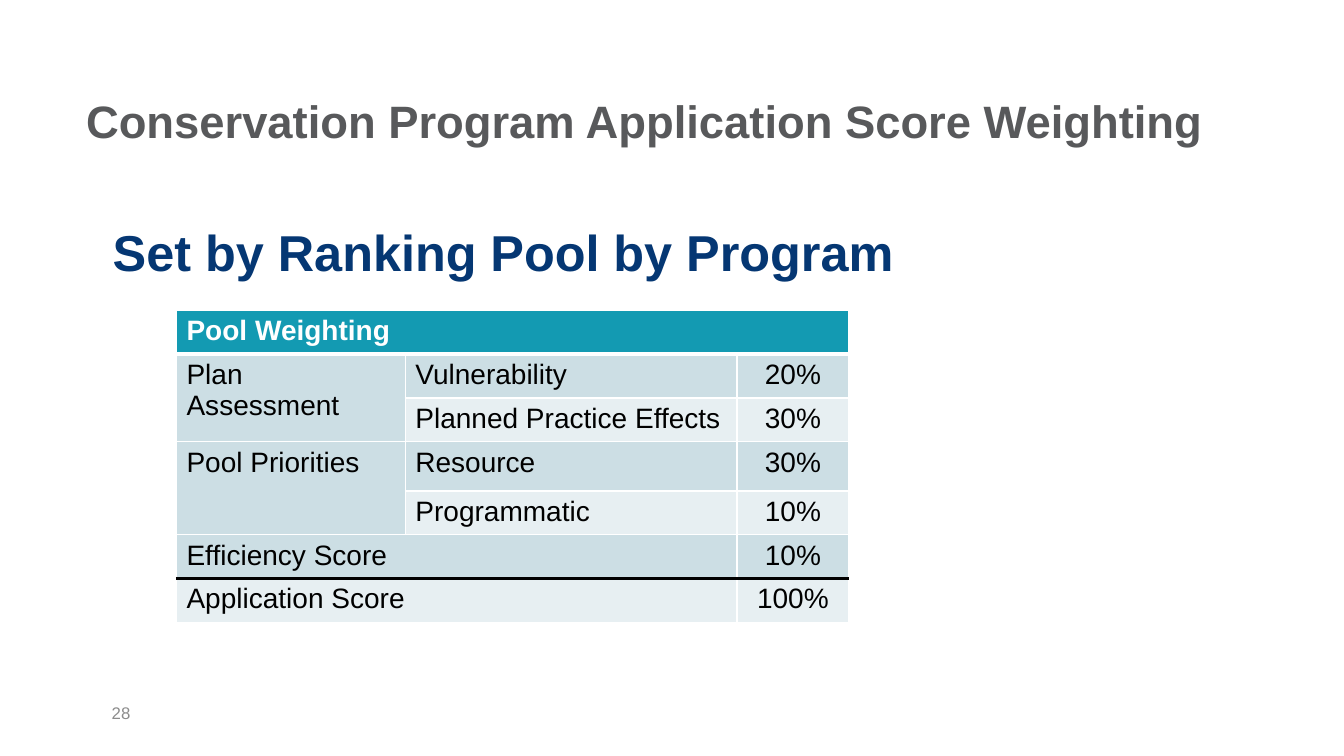
from dataclasses import dataclass

from lxml import etree
from pptx import Presentation
from pptx.dml.color import RGBColor
from pptx.enum import text
from pptx.oxml import ns
from pptx.util import Inches, Pt


@dataclass(frozen=True)
class Theme:
    font: str = "Arial"
    title: str = "58595B"
    subtitle: str = "053773"
    number: str = "8C8C8C"
    header: str = "139AB2"
    band_dark: str = "CCDEE4"
    band_light: str = "E7EFF2"
    white: str = "FFFFFF"
    black: str = "000000"
    title_size: float = 32.4
    subtitle_size: int = 36
    table_size: int = 20
    number_size: int = 12
    thin: int = 1
    thick: int = 3


THEME = Theme()
LEFT, CENTER = text.PP_ALIGN.LEFT, text.PP_ALIGN.CENTER
TOP, MIDDLE = text.MSO_ANCHOR.TOP, text.MSO_ANCHOR.MIDDLE

COLUMNS = [2.27, 3.29, 1.11]
ROW_HEIGHTS = [0.41, 0.41, 0.41, 0.49, 0.41, 0.41, 0.41]
WEIGHTS = [
    ("Pool Weighting", "", ""),
    ("Plan Assessment", "Vulnerability", "20%"),
    ("", "Planned Practice Effects", "30%"),
    ("Pool Priorities", "Resource", "30%"),
    ("", "Programmatic", "10%"),
    ("Efficiency Score", "", "10%"),
    ("Application Score", "", "100%"),
]
MERGES = [((0, 0), (0, 2)), ((1, 0), (2, 0)), ((3, 0), (4, 0)),
          ((5, 0), (5, 1)), ((6, 0), (6, 1))]
HEADER_ROW, TOTAL_ROW = 0, len(WEIGHTS) - 1


def style(paragraph, size, color, bold=False, align=LEFT):
    paragraph.alignment = align
    font = paragraph.font
    font.name, font.size, font.bold = THEME.font, Pt(size), bold
    font.color.rgb = RGBColor.from_string(color)


def add_line(slide, box, words, size, color, bold=False, align=LEFT, anchor=MIDDLE):
    frame = slide.shapes.add_textbox(*map(Inches, box)).text_frame
    frame.word_wrap = True
    frame.vertical_anchor = anchor
    frame.text = words
    style(frame.paragraphs[0], size, color, bold, align)


def set_border(cell, side, color, width):
    properties = cell._tc.get_or_add_tcPr()
    line = etree.SubElement(properties, ns.qn(f"a:ln{side}"), w=str(Pt(width)))
    fill = etree.SubElement(line, ns.qn("a:solidFill"))
    etree.SubElement(fill, ns.qn("a:srgbClr"), val=color)


def set_borders(cell, row):
    for side in "LRTB":
        color, width = THEME.white, THEME.thin
        if (row, side) in [(TOTAL_ROW - 1, "B"), (TOTAL_ROW, "T")]:
            color, width = THEME.black, THEME.thick
        elif (row, side) in [(HEADER_ROW, "B"), (HEADER_ROW + 1, "T")]:
            width = THEME.thick
        set_border(cell, side, color, width)


def add_weighting_table(slide, left, top):
    box = (left, top, sum(COLUMNS), sum(ROW_HEIGHTS))
    table = slide.shapes.add_table(
        len(WEIGHTS), len(COLUMNS), *map(Inches, box)).table
    for column, width in zip(table.columns, COLUMNS):
        column.width = Inches(width)
    for row, height in zip(table.rows, ROW_HEIGHTS):
        row.height = Inches(height)
    for start, end in MERGES:
        table.cell(*start).merge(table.cell(*end))

    for r, entries in enumerate(WEIGHTS):
        is_header = r == HEADER_ROW
        band = THEME.band_dark if r % 2 else THEME.band_light
        for c, entry in enumerate(entries):
            cell = table.cell(r, c)
            cell.text = entry
            style(cell.text_frame.paragraphs[0], THEME.table_size,
                  THEME.white if is_header else THEME.black,
                  is_header, CENTER if c == 2 else LEFT)
            set_borders(cell, r)
            cell.fill.solid()
            cell.fill.fore_color.rgb = RGBColor.from_string(
                THEME.header if is_header else band)


def add_weighting_slide(deck):
    slide = deck.slides.add_slide(deck.slide_layouts[6])
    add_line(slide, (0.33, 0.68, 12, 1.03),
             " Conservation Program Application Score Weighting",
             THEME.title_size, THEME.title, True, CENTER)
    add_line(slide, (1.01, 6.87, 3.11, 0.4), "28",
             THEME.number_size, THEME.number)
    add_weighting_table(slide, 1.75, 3.08)
    add_line(slide, (1.02, 2.14, 8.46, 1.44), "Set by Ranking Pool by Program",
             THEME.subtitle_size, THEME.subtitle, True, anchor=TOP)


def main():
    deck = Presentation()
    deck.slide_width, deck.slide_height = Inches(13.33), Inches(7.5)
    add_weighting_slide(deck)
    deck.save("out.pptx")


if __name__ == "__main__":
    main()
